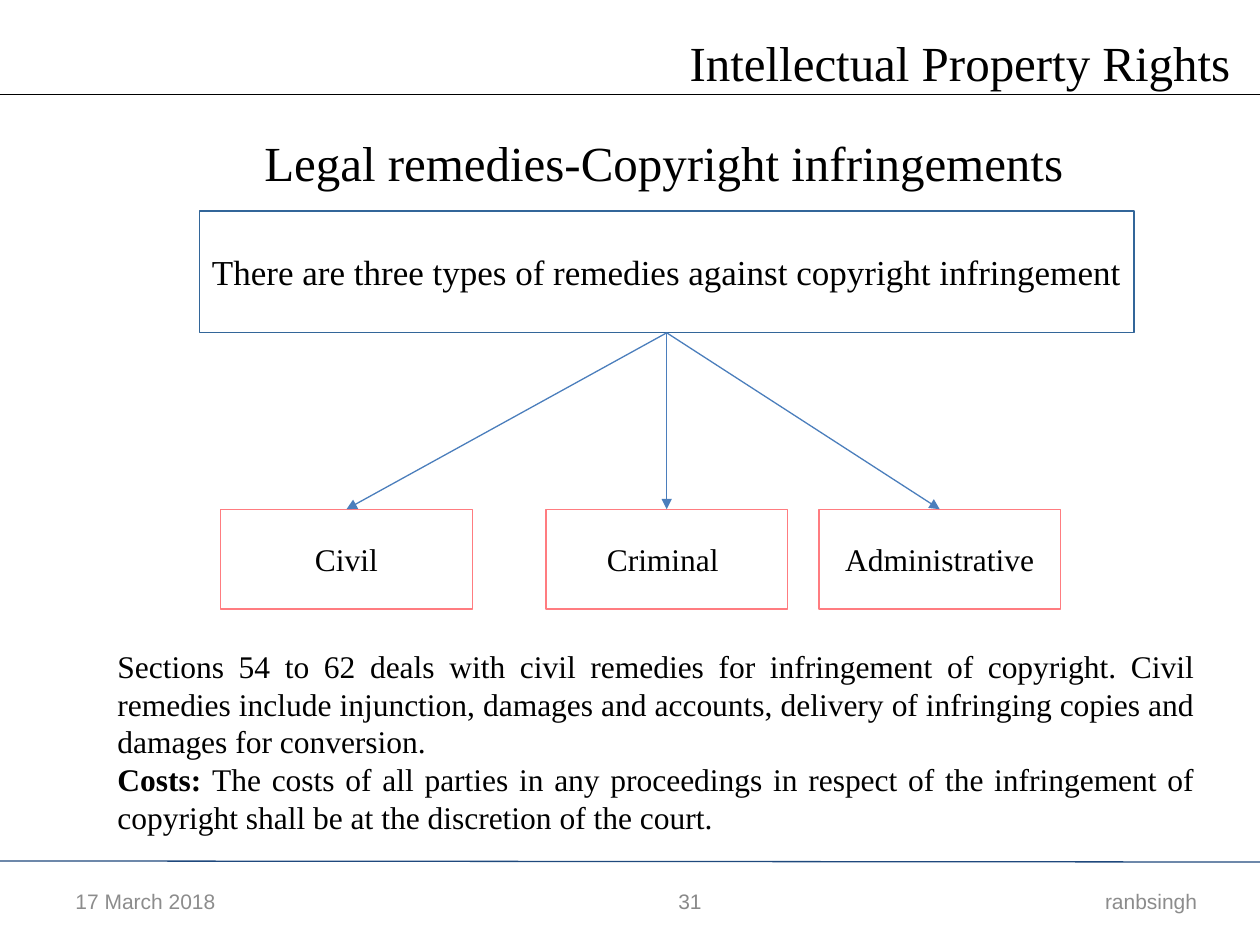
"""Build the slide on legal remedies for copyright infringement."""
from lxml.etree import SubElement
from pptx import Presentation
from pptx.dml.color import RGBColor
from pptx.enum.shapes import MSO_CONNECTOR, MSO_SHAPE
from pptx.enum.text import MSO_ANCHOR, PP_ALIGN
from pptx.oxml.ns import qn
from pptx.util import Inches, Pt

COLORS = {
    "text": "000000", "paper": "FFFFFF", "rule": "1F497D", "root": "336699",
    "branch": "FF7C80", "arrow": "4B7EBC", "footer": "8C8C8C", "number": "898989",
}
COLUMNS, ROWS = 120, 90
CELL = Inches(10) / COLUMNS
SERIF, SANS = "Times New Roman", "Arial"
BODY = [
    [("Sections 54 to 62 deals with civil remedies for infringement of copyright. "
      "Civil remedies include injunction, damages and accounts, delivery of "
      "infringing copies and damages for conversion.", False)],
    [("Costs: ", True),
     ("The costs of all parties in any proceedings in respect of the infringement "
      "of copyright shall be at the discretion of the court.", False)],
]
REMEDIES = [("Civil", 21, 24), ("Criminal ", 52, 23), ("Administrative", 78, 23)]


def grid(*cells):
    return [round(cell * CELL) for cell in cells]


def color(name):
    return RGBColor.from_string(COLORS[name])


def style(span, size, font=SERIF, tint="text", bold=False):
    span.font.size, span.font.name, span.font.bold = Pt(size), font, bold
    span.font.color.rgb = color(tint)


def fill_text(box, paragraphs, size, align, anchor, wrap, **look):
    frame = box.text_frame
    frame.word_wrap, frame.vertical_anchor = wrap, anchor
    for index, pieces in enumerate(paragraphs):
        para = frame.add_paragraph() if index else frame.paragraphs[0]
        para.alignment = align
        for words, bold in pieces:
            span = para.add_run()
            span.text = words
            style(span, size, bold=bold, **look)


def add_text(page, place, paragraphs, size, align=PP_ALIGN.LEFT,
             anchor=MSO_ANCHOR.TOP, wrap=True, **look):
    box = page.shapes.add_textbox(*grid(*place))
    fill_text(box, paragraphs, size, align, anchor, wrap, **look)


def add_box(page, place, words, size, outline):
    box = page.shapes.add_shape(MSO_SHAPE.RECTANGLE, *grid(*place))
    box.shadow.inherit = False
    box.fill.solid()
    box.fill.fore_color.rgb = color("paper")
    box.line.color.rgb, box.line.width = color(outline), Pt(0.75)
    fill_text(box, [[(words, False)]], size, PP_ALIGN.CENTER, MSO_ANCHOR.MIDDLE, False)
    return box


def add_line(page, tint, ends=(0, 0, 0, 0)):
    line = page.shapes.add_connector(MSO_CONNECTOR.STRAIGHT, *grid(*ends))
    line.line.color.rgb, line.line.width = color(tint), Pt(0.75)
    SubElement(line.element.spPr, qn("a:effectLst"))
    return line


def add_arrow(page, source, target):
    arrow = add_line(page, "arrow")
    arrow.begin_connect(source, 2)
    arrow.end_connect(target, 0)
    SubElement(arrow.line._get_or_add_ln(), qn("a:tailEnd"), type="triangle")


def add_footer(page, left, width, words, align, tint):
    add_text(page, (left, 83.4, width, 4.8), [[(words, False)]], 12, align,
             MSO_ANCHOR.MIDDLE, font=SANS, tint=tint)


def add_tree(page):
    root = add_box(page, (19, 20.1, 89, 11.6), "There are three types of remedies "
                   "against copyright infringement", 20, "root")
    for words, left, width in REMEDIES:
        branch = add_box(page, (left, 48.5, width, 9.5), words, 18, "branch")
        add_arrow(page, root, branch)


def main():
    deck = Presentation()
    deck.slide_width, deck.slide_height = grid(COLUMNS, ROWS)
    page = deck.slides.add_slide(deck.slide_layouts[6])
    add_line(page, "text", (0, 9, COLUMNS, 9))
    add_text(page, (64.5, 2.5, 54.5, 6.9), [[("Intellectual Property Rights", False)]],
             28, wrap=False)
    add_line(page, "rule", (0, 82, COLUMNS, 82.1))
    add_footer(page, 6, 28, "17 March 2018", PP_ALIGN.LEFT, "footer")
    add_footer(page, 40, 28, "31", PP_ALIGN.RIGHT, "number")
    add_footer(page, 81, 34.2, "ranbsingh", PP_ALIGN.RIGHT, "footer")
    add_text(page, (10, 61, 105, 20), BODY, 18, PP_ALIGN.JUSTIFY)
    add_tree(page)
    add_text(page, (24, 12, 79.3, 6.9),
             [[("Legal remedies-Copyright infringements", False)]], 28, wrap=False)
    deck.save("out.pptx")


if __name__ == "__main__":
    main()
